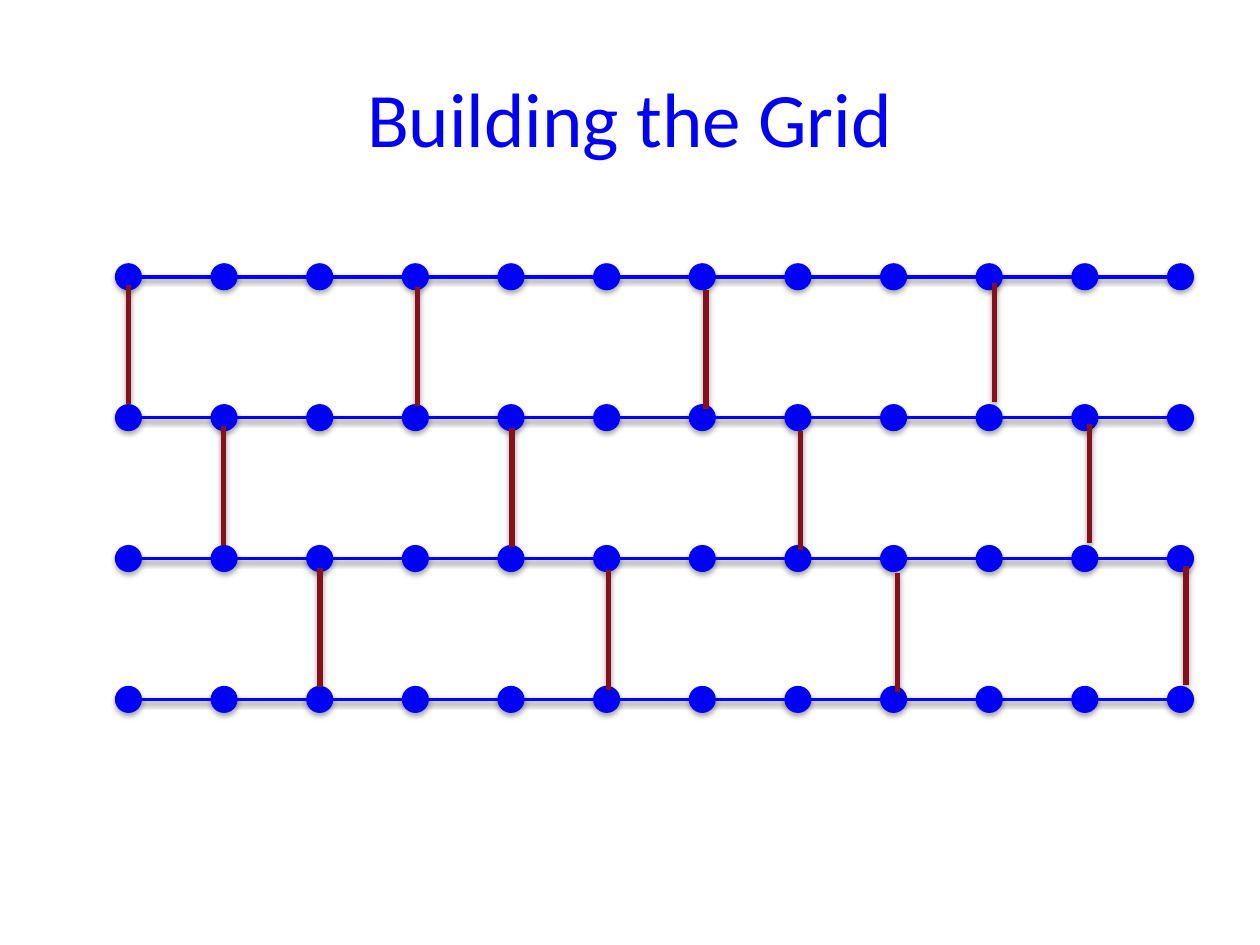
"""Build the "Building the Grid" slide: four rows of nodes joined by staggered bars."""
from dataclasses import dataclass

from lxml import etree
from pptx import Presentation
from pptx.dml.color import RGBColor
from pptx.enum.shapes import MSO_CONNECTOR, MSO_SHAPE
from pptx.enum.text import MSO_ANCHOR, PP_ALIGN
from pptx.oxml.ns import qn
from pptx.util import Cm, Pt

STRAIGHT = MSO_CONNECTOR.STRAIGHT
OVAL = MSO_SHAPE.OVAL
MIDDLE = MSO_ANCHOR.MIDDLE
CENTER = PP_ALIGN.CENTER


@dataclass(frozen=True)
class Theme:
    blue: RGBColor = RGBColor(0x00, 0x00, 0xFF)
    red: RGBColor = RGBColor(0x89, 0x10, 0x1B)
    shadow: str = "000000"
    font: str = "Calibri"
    title_size: Pt = Pt(44)


theme = Theme()


def add_shadow(shape, distance, opacity):
    properties = shape._element.spPr
    effects = etree.SubElement(properties, qn("a:effectLst"))
    outer = etree.SubElement(
        effects, qn("a:outerShdw"), blurRad=str(Pt(3.15)), dist=str(Pt(distance)),
        dir="5400000", rotWithShape="0")
    color = etree.SubElement(outer, qn("a:srgbClr"), val=theme.shadow)
    etree.SubElement(color, qn("a:alpha"), val=str(opacity * 1000))


def add_line(shapes, start, end, color, width):
    line = shapes.add_connector(
        STRAIGHT, Cm(start[0]), Cm(start[1]), Cm(end[0]), Cm(end[1]))
    line.line.color.rgb = color
    line.line.width = Pt(width)
    add_shadow(line, 1.57, 38)


presentation = Presentation()
presentation.slide_width = Cm(25.4)
presentation.slide_height = Cm(19.05)
slide = presentation.slides.add_slide(presentation.slide_layouts[5])

title = slide.shapes.title
title.left, title.top, title.width, title.height = Cm(1.27), Cm(0.76), Cm(22.86), Cm(3.18)
title.text_frame.vertical_anchor = MIDDLE
paragraph = title.text_frame.paragraphs[0]
paragraph.alignment = CENTER
run = paragraph.add_run()
run.text = "Building the Grid"
run.font.name = theme.font
run.font.size = theme.title_size
run.font.color.rgb = theme.blue

row_count, node_count = 4, 12
first_x, first_y = 2.59, 5.58
column_gap, row_gap = 1.928, 2.84
diameter = 0.52

for row in range(row_count):
    y = first_y + row * row_gap
    row_shapes = slide.shapes.add_group_shape().shapes
    add_line(row_shapes, (2.82, y), (23.8, y), theme.blue, 2)
    for column in range(node_count):
        x = first_x + column * column_gap
        node = row_shapes.add_shape(
            OVAL, Cm(x - diameter / 2), Cm(y - diameter / 2), Cm(diameter), Cm(diameter))
        node.fill.solid()
        node.fill.fore_color.rgb = theme.blue
        node.line.color.rgb = theme.blue
        node.line.width = Pt(0.75)
        add_shadow(node, 1.81, 35)

bar_starts = [(2.59, 5.74), (4.5, 8.58), (6.45, 11.45)]
bar_length, bar_set_gap = 2.4, 5.82
bar_set_drops = [0, 0.05, 0.1, -0.04]

for index, drop in enumerate(bar_set_drops):
    bar_shapes = slide.shapes.add_group_shape().shapes if index else slide.shapes
    for start_x, start_y in bar_starts:
        x, y = start_x + index * bar_set_gap, start_y + drop
        add_line(bar_shapes, (x, y), (x, y + bar_length), theme.red, 3)

presentation.save("out.pptx")
